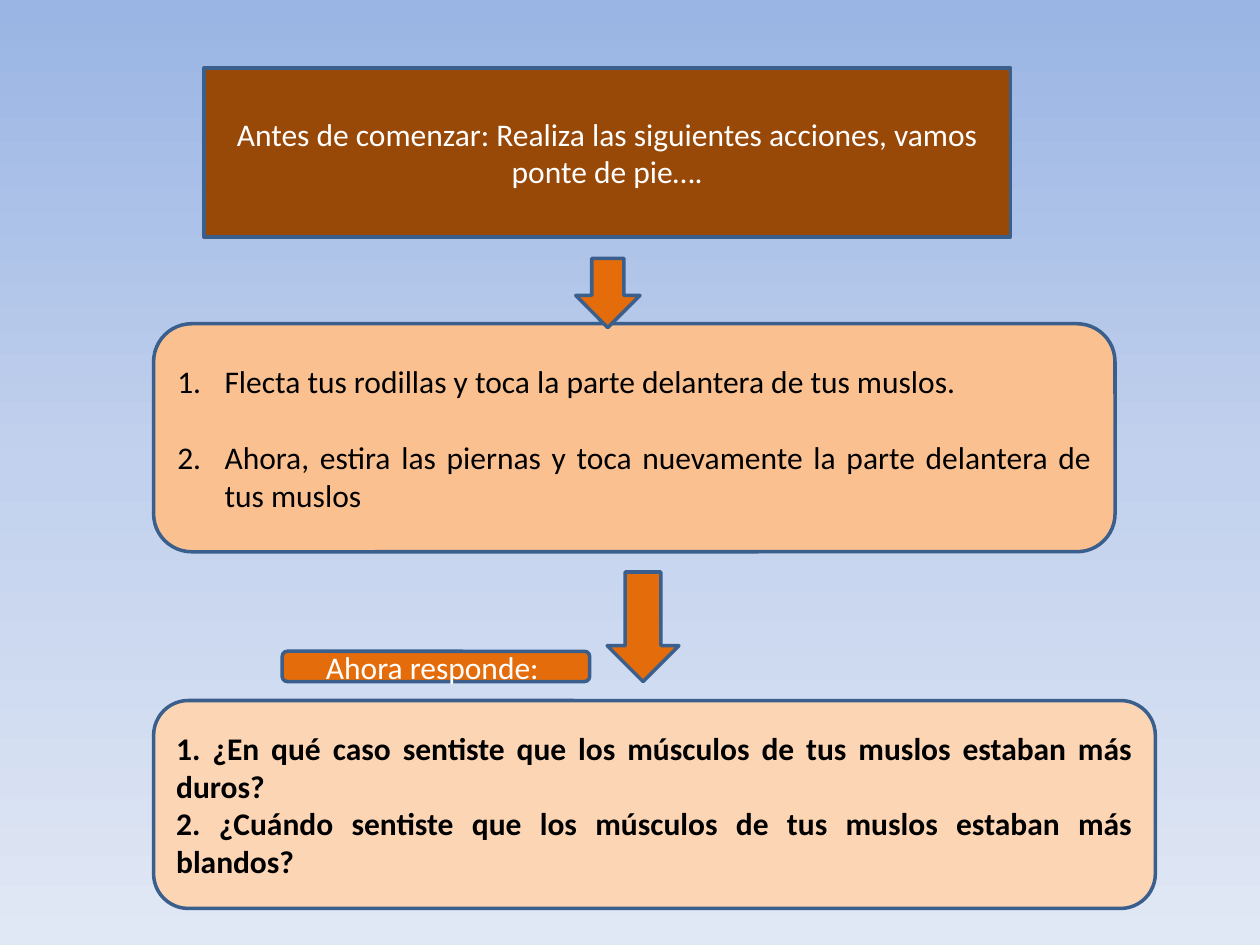
from copy import deepcopy
from dataclasses import dataclass

from lxml.etree import SubElement
from pptx import Presentation
from pptx.dml.color import RGBColor
from pptx.enum.shapes import MSO_SHAPE as Preset
from pptx.enum.text import MSO_ANCHOR as Anchor, MSO_AUTO_SIZE as AutoSize, PP_ALIGN as Align
from pptx.oxml.ns import qn
from pptx.shapes.autoshape import Shape
from pptx.slide import Slide
from pptx.util import Pt

COLORS = {
    "outline": "3A5F8C",
    "heading": "984807",
    "steps": "FAC090",
    "questions": "FCD5B5",
    "accent": "E46C0A",
    "dark": "000000",
    "light": "FFFFFF",
}
BACKGROUND = [(0, "9AB5E4"), (0.5, "C2D1ED"), (1, "E1E8F5")]
FONT, FONT_SIZE = "Calibri", 18
NUMBER_INDENT = 27


@dataclass(frozen=True)
class Box:
    """Position and size in points, with a fill named in COLORS."""
    left: float
    top: float
    width: float
    height: float
    fill: str


HEADING = Box(116.6, 38.9, 460.8, 96.5, "heading")
STEPS = Box(87.8, 185, 549.4, 130.3, "steps")
QUESTIONS = Box(87.8, 400.3, 572.4, 118.8, "questions")
PROMPT = Box(161.3, 372.2, 175.7, 17.3, "accent")
ARROWS = [
    Box(329, 147.6, 36.7, 39.6, "accent"),
    Box(347, 326.9, 41, 62.6, "accent"),
]


def color(name: str) -> RGBColor:
    return RGBColor.from_string(COLORS[name])


def paint_background(slide: Slide) -> None:
    fill = slide.background.fill
    fill.gradient()
    fill.gradient_angle = 270
    stop_list = slide.element.xpath(".//a:gsLst")[0]
    stop_list.insert(1, deepcopy(stop_list[0]))
    for stop, (position, hex_color) in zip(fill.gradient_stops, BACKGROUND):
        stop.position = position
        stop.color.rgb = RGBColor.from_string(hex_color)


def style(shape: Shape, box: Box) -> None:
    shape.shadow.inherit = False
    shape.fill.solid()
    shape.fill.fore_color.rgb = color(box.fill)
    shape.line.color.rgb = color("outline")
    shape.line.width = Pt(2)


def add_box(slide: Slide, preset: Preset, box: Box) -> Shape:
    shape = slide.shapes.add_shape(
        preset, Pt(box.left), Pt(box.top), Pt(box.width), Pt(box.height))
    style(shape, box)
    return shape


def round_placeholder(shape: Shape, box: Box) -> Shape:
    """Move a placeholder and give it the rounded outline of the other boxes."""
    shape.left, shape.top = Pt(box.left), Pt(box.top)
    shape.width, shape.height = Pt(box.width), Pt(box.height)
    geometry = SubElement(shape.element.spPr, qn("a:prstGeom"), prst="roundRect")
    SubElement(geometry, qn("a:avLst"))
    style(shape, box)
    return shape


def write(shape: Shape, lines: list[str], *, font_color: str = "dark",
          align: Align = Align.JUSTIFY, bold: bool = False,
          numbered: bool = False, gap: float = 0) -> None:
    frame = shape.text_frame
    frame.word_wrap = True
    frame.auto_size = AutoSize.NONE
    frame.vertical_anchor = Anchor.MIDDLE
    for index, line in enumerate(lines):
        paragraph = frame.add_paragraph() if index else frame.paragraphs[0]
        paragraph.alignment = align
        paragraph.space_before = Pt(gap if index else 0)
        run = paragraph.add_run()
        run.text = line
        run.font.name = FONT
        run.font.size = Pt(FONT_SIZE)
        run.font.bold = bold
        run.font.color.rgb = color(font_color)
        if numbered:
            properties = paragraph._p.get_or_add_pPr()
            properties.set("marL", str(Pt(NUMBER_INDENT)))
            properties.set("indent", str(-Pt(NUMBER_INDENT)))
            SubElement(properties, qn("a:buFont"), typeface="+mj-lt")
            SubElement(properties, qn("a:buAutoNum"), type="arabicPeriod")


def main() -> None:
    presentation = Presentation()
    presentation.slide_width, presentation.slide_height = Pt(720), Pt(540)
    slide = presentation.slides.add_slide(presentation.slide_layouts[1])
    paint_background(slide)

    heading = round_placeholder(slide.shapes.title, HEADING)
    write(heading, ["Antes de comenzar: Realiza las siguientes acciones, vamos ponte de pie…."],
          font_color="light", align=Align.CENTER)

    steps = round_placeholder(slide.placeholders[1], STEPS)
    write(steps, [
        "Flecta tus rodillas y toca la parte delantera de tus muslos.",
        "Ahora, estira las piernas y toca nuevamente la parte delantera de tus muslos",
    ], numbered=True, gap=22)

    questions = add_box(slide, Preset.ROUNDED_RECTANGLE, QUESTIONS)
    write(questions, [
        "1. ¿En qué caso sentiste que los músculos de tus muslos estaban más duros?",
        "2. ¿Cuándo sentiste que los músculos de tus muslos estaban más blandos?",
    ], bold=True)

    for arrow in ARROWS:
        add_box(slide, Preset.DOWN_ARROW, arrow)

    prompt = add_box(slide, Preset.ROUNDED_RECTANGLE, PROMPT)
    write(prompt, ["Ahora responde: "], font_color="light", align=Align.CENTER)

    presentation.save("out.pptx")


if __name__ == "__main__":
    main()
